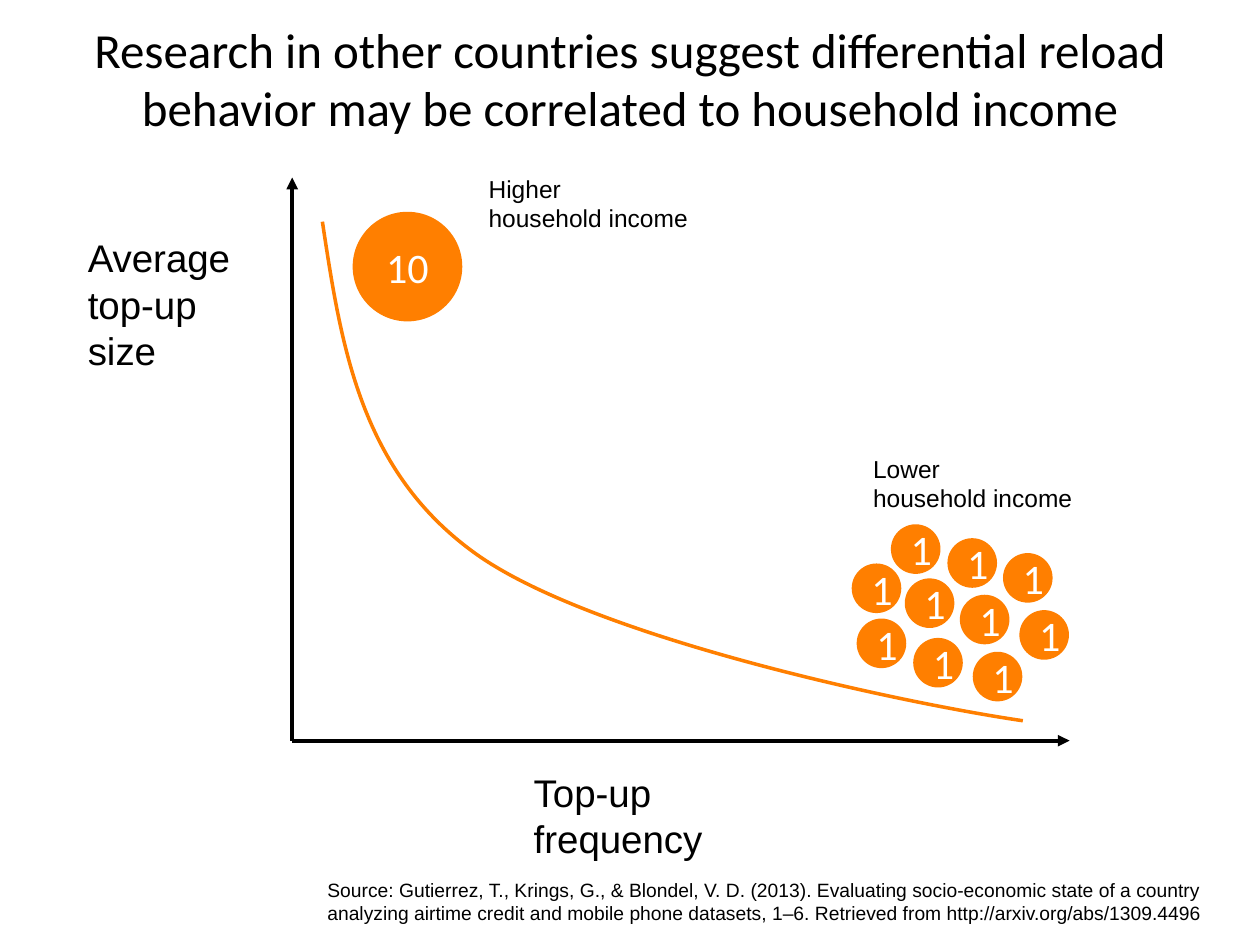
from lxml.etree import SubElement as Sub
from pptx import Presentation
from pptx.dml.color import RGBColor
from pptx.enum.shapes import MSO_CONNECTOR as Link, MSO_SHAPE as Kind
from pptx.enum.text import MSO_ANCHOR as Anchor, PP_ALIGN as Align
from pptx.oxml.ns import qn
from pptx.util import Cm, Pt

ORANGE, BLACK, WHITE = "FF7F00", "000000", "FFFFFF"
COINS = [(1.93, 0.28), (1.07, 1.09), (0, 0.79), (0.1, 1.9), (3.38, 1.73),
         (2.18, 1.42), (0.79, 0), (2.44, 2.57), (1.24, 2.29), (3.05, 0.58)]
CURVE = [(0.61, 0.89), (0.99, 3.4), (1.37, 5.92), (3.71, 7.59),
         (6.07, 9.27), (12.27, 10.59), (14.73, 10.95)]


def paint(part, color):
    part.solid()
    part.fore_color.rgb = RGBColor.from_string(color)


def write(frame, text, size=14, face="Arial", color=BLACK, align=Align.LEFT,
          anchor=Anchor.TOP, wrap=True):
    frame.text = text
    frame.word_wrap = wrap
    frame.vertical_anchor = anchor
    for para in frame.paragraphs:
        para.alignment = align
        for run in para.runs:
            run.font.size = Pt(size)
            run.font.name = face
            run.font.color.rgb = RGBColor.from_string(color)


def label(slide, text, left, top, width, height, **style):
    box = slide.shapes.add_textbox(Cm(left), Cm(top), Cm(width), Cm(height))
    write(box.text_frame, text, **style)


def coin(slide, text, left, top, size):
    disc = slide.shapes.add_shape(Kind.OVAL, Cm(left), Cm(top), Cm(size), Cm(size))
    disc.shadow.inherit = False
    paint(disc.fill, ORANGE)
    disc.line.fill.background()
    write(disc.text_frame, text, size=24, face="Calibri", color=WHITE,
          align=Align.CENTER, anchor=Anchor.MIDDLE)


def arrow(slide, *ends):
    line = slide.shapes.add_connector(Link.STRAIGHT, *map(Cm, ends))
    line.line.width = Pt(2.25)
    paint(line.line.fill, BLACK)
    Sub(line.line._get_or_add_ln(), qn("a:tailEnd"), type="triangle")
    Sub(line._element.spPr, qn("a:effectLst"))


def curve(slide, left, top):
    spots = [(Cm(left + x), Cm(top + y)) for x, y in CURVE]
    pen = slide.shapes.build_freeform(*spots[0])
    pen.add_line_segments(spots[1:], close=False)
    bend = pen.convert_to_shape()
    bend.shadow.inherit = False
    bend.fill.background()
    paint(bend.line.fill, ORANGE)
    bend.line.width = Pt(2)
    steps = list(bend._element.iter(qn("a:lnTo")))
    trail = steps[0].getparent()
    for start in range(0, len(steps), 3):
        arc = Sub(trail, qn("a:cubicBezTo"))
        for step in steps[start:start + 3]:
            arc.append(step[0])
            trail.remove(step)


def title(slide, left, top, width, height):
    head = slide.shapes.title
    head.left, head.top, head.width, head.height = map(Cm, (left, top, width, height))
    write(head.text_frame, "Research in other countries suggest differential reload "
          "behavior may be correlated to household income", size=28,
          face="Calibri", align=Align.CENTER, anchor=Anchor.MIDDLE)


def cluster(slide, left, top):
    for x, y in COINS:
        coin(slide, "1", left + x, top + y, 1)


def graph(slide, left, top, width, height):
    base = top + height
    coin(slide, "10", left + 1.22, top + 0.69, 2.21)
    cluster(slide, left + 11.28, top + 6.99)
    arrow(slide, left, base, left, top)
    arrow(slide, left, base, left + width, base)
    label(slide, "Top-up\vfrequency", left + 4.62, base + 0.44, 6.1, 1.19,
          size=22, wrap=False)
    label(slide, "Average\vtop-up size", left - 4.37, top + 1.02, 4.24, 2.13, size=22)
    for name, x, y in [("Higher", 3.71, -0.2), ("Lower", 11.46, 5.44)]:
        label(slide, f"{name}\nhousehold income", left + x, top + y, 4.57, 1.45,
              wrap=False)
    curve(slide, left, top)


def source(slide, left, top, width, height):
    label(slide, "Source: Gutierrez, T., Krings, G., & Blondel, V. D. (2013). "
          "Evaluating socio-economic state of a country analyzing airtime credit "
          "and mobile phone datasets, 1–6. Retrieved from "
          "http://arxiv.org/abs/1309.4496", left, top, width, height, size=11)


def main():
    deck = Presentation()
    deck.slide_width, deck.slide_height = Cm(25.4), Cm(19.05)
    slide = deck.slides.add_slide(deck.slide_layouts[5])
    title(slide, 1.27, 0.2, 22.86, 2.74)
    graph(slide, 5.89, 3.58, 15.67, 11.35)
    source(slide, 6.35, 17.58, 18.21, 1.19)
    deck.save("out.pptx")


if __name__ == "__main__":
    main()
